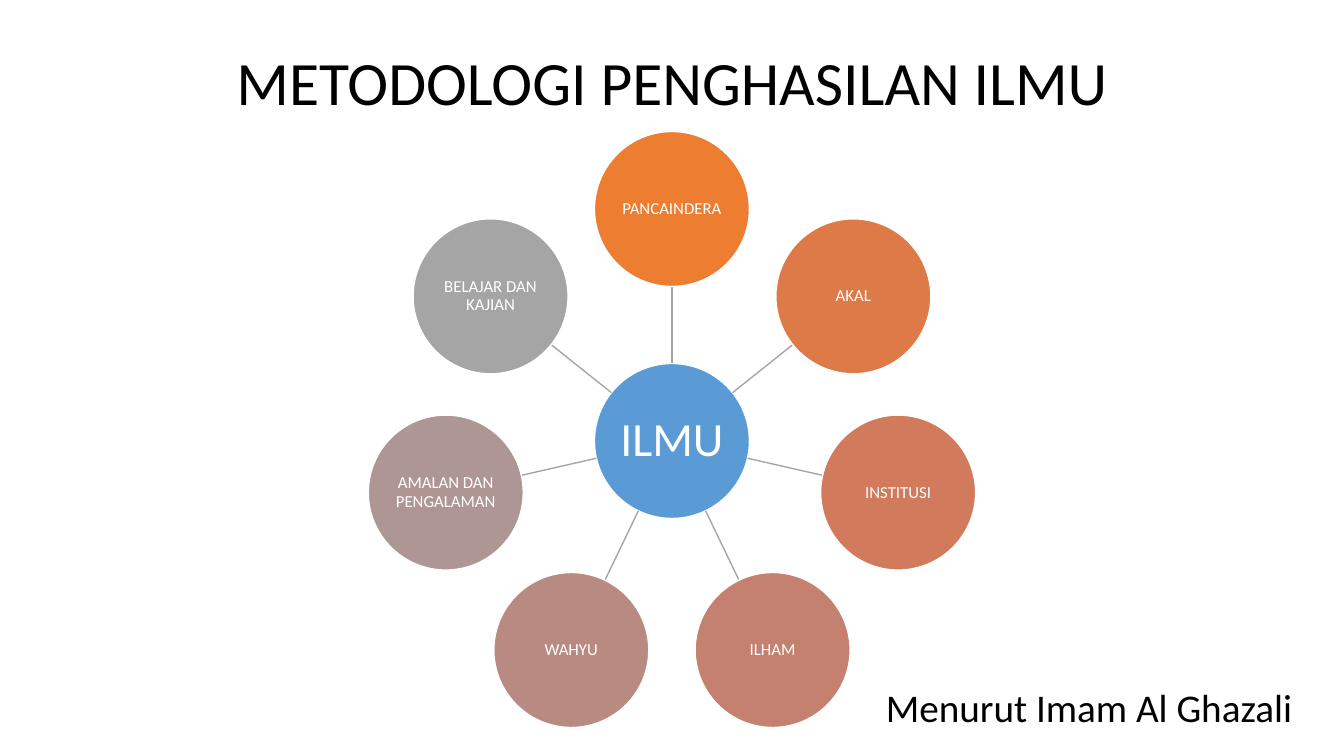
from dataclasses import dataclass
from math import cos, pi, sin

from pptx import Presentation
from pptx.dml.color import RGBColor
from pptx.enum.shapes import MSO_CONNECTOR as Connector, MSO_SHAPE as Preset
from pptx.enum.text import MSO_ANCHOR as Anchor, PP_ALIGN as Align
from pptx.oxml.ns import qn
from pptx.shapes.autoshape import Shape
from pptx.slide import Slide
from pptx.util import Emu, Pt

EMU_PER_PX = 914400 / 100.8
SLIDE_WIDTH, SLIDE_HEIGHT = 1344, 756
HUB_X, HUB_Y = 672, 441
ORBIT = 232
DIAMETER = 155
FONT = "Calibri"
COLORS = {
    "black": "000000",
    "white": "FFFFFF",
    "hub": "5B9BD5",
    "spoke": "A5A5A5",
    "pancaindera": "ED7D31",
    "akal": "DE7A47",
    "institusi": "D17B5C",
    "ilham": "C48170",
    "wahyu": "B98A82",
    "amalan": "AE9694",
    "belajar": "A5A5A5",
}


@dataclass(frozen=True)
class Source:
    label: str
    color: str


@dataclass(frozen=True)
class Caption:
    text: str
    left: int
    top: int
    width: int
    height: int
    size: int


SOURCES = [
    Source("PANCAINDERA", "pancaindera"),
    Source("AKAL", "akal"),
    Source("INSTITUSI", "institusi"),
    Source("ILHAM", "ilham"),
    Source("WAHYU", "wahyu"),
    Source("AMALAN DAN PENGALAMAN", "amalan"),
    Source("BELAJAR DAN KAJIAN", "belajar"),
]
TITLE = Caption("METODOLOGI PENGHASILAN ILMU", 78, 30, 1189, 102, 44)
ATTRIBUTION = Caption("Menurut Imam Al Ghazali", 861, 686, 456, 42, 28)


def px(length: float) -> Emu:
    return Emu(round(length * EMU_PER_PX))


def rgb(name: str) -> RGBColor:
    return RGBColor.from_string(COLORS[name])


def write_text(shape: Shape, text: str, *, size: int, color: str,
               margin_x: int = 10, margin_y: int = 5, line_spacing: float = 1.0) -> None:
    frame = shape.text_frame
    frame.word_wrap = True
    frame.vertical_anchor = Anchor.MIDDLE
    frame.margin_left = frame.margin_right = px(margin_x)
    frame.margin_top = frame.margin_bottom = px(margin_y)
    paragraph = frame.paragraphs[0]
    paragraph.alignment = Align.CENTER
    paragraph.line_spacing = line_spacing
    run = paragraph.add_run()
    run.text = text
    run.font.name = FONT
    run.font.size = Pt(size)
    run.font.color.rgb = rgb(color)


def add_caption(slide: Slide, caption: Caption) -> None:
    shape = slide.shapes.add_textbox(
        px(caption.left), px(caption.top), px(caption.width), px(caption.height))
    write_text(shape, caption.text, size=caption.size, color="black")


def add_circle(slide: Slide, center_x: float, center_y: float, label: str,
               *, color: str, size: int, margin: int) -> None:
    radius = DIAMETER / 2
    shape = slide.shapes.add_shape(
        Preset.OVAL, px(center_x - radius), px(center_y - radius), px(DIAMETER), px(DIAMETER))
    shape.shadow.inherit = False
    shape.fill.solid()
    shape.fill.fore_color.rgb = rgb(color)
    shape.line.color.rgb = rgb("white")
    shape.line.width = Pt(1)
    write_text(shape, label, size=size, color="white",
               margin_x=margin, margin_y=margin, line_spacing=0.9)


def orbit_point(angle: float, distance: float) -> tuple[float, float]:
    return HUB_X + distance * sin(angle), HUB_Y - distance * cos(angle)


def add_spoke(slide: Slide, angle: float) -> None:
    start_x, start_y = orbit_point(angle, DIAMETER / 2)
    end_x, end_y = orbit_point(angle, ORBIT - DIAMETER / 2)
    connector = slide.shapes.add_connector(
        Connector.STRAIGHT, px(start_x), px(start_y), px(end_x), px(end_y))
    connector.line.color.rgb = rgb("spoke")
    connector.line.width = Pt(1)
    properties = connector._element.spPr
    properties.append(properties.makeelement(qn("a:effectLst"), {}))


def main() -> None:
    presentation = Presentation()
    presentation.slide_width = px(SLIDE_WIDTH)
    presentation.slide_height = px(SLIDE_HEIGHT)
    slide = presentation.slides.add_slide(presentation.slide_layouts[6])

    add_caption(slide, TITLE)
    add_circle(slide, HUB_X, HUB_Y, "ILMU", color="hub", size=34, margin=2)
    for index, source in enumerate(SOURCES):
        angle = 2 * pi * index / len(SOURCES)
        add_spoke(slide, angle)
        add_circle(slide, *orbit_point(angle, ORBIT), source.label,
                   color=source.color, size=12, margin=1)
    add_caption(slide, ATTRIBUTION)

    presentation.save("out.pptx")


if __name__ == "__main__":
    main()
